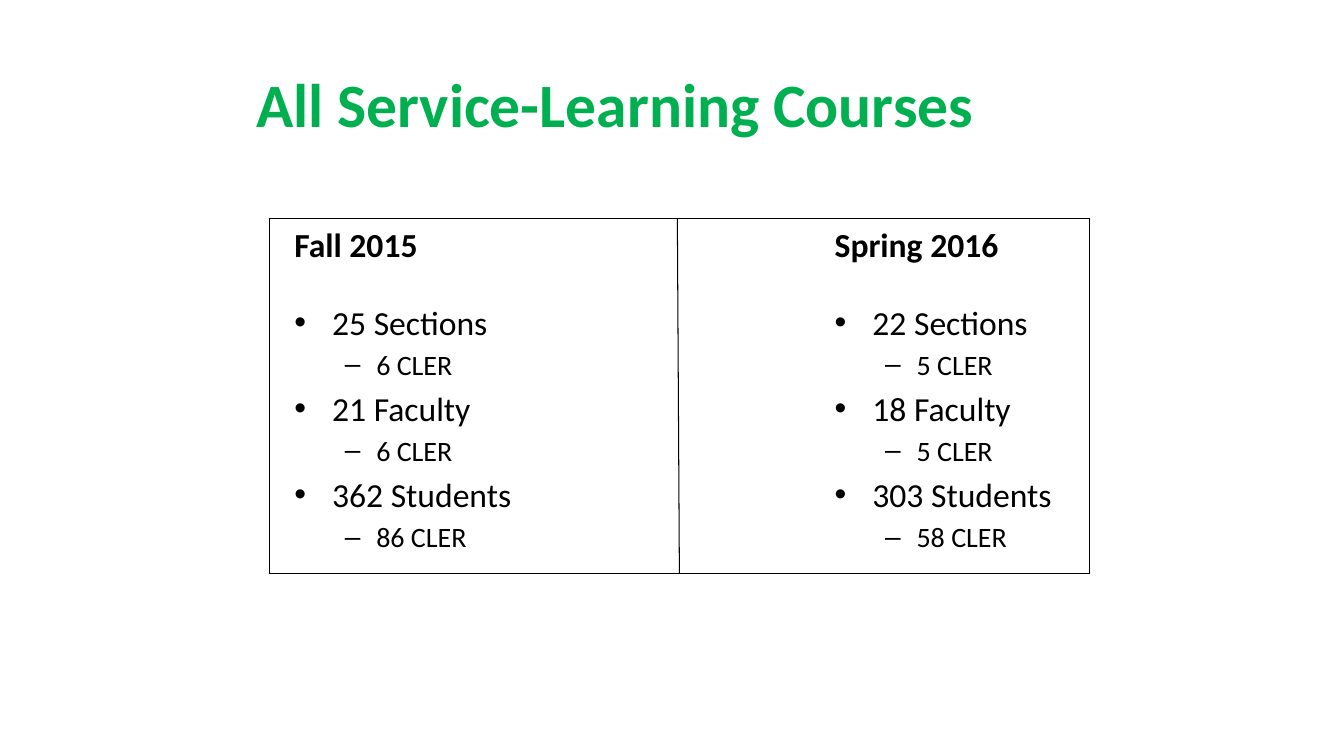
from dataclasses import dataclass

from lxml.etree import SubElement
from pptx import Presentation
from pptx.dml.color import RGBColor
from pptx.enum.shapes import MSO_CONNECTOR
from pptx.enum.text import MSO_ANCHOR, MSO_AUTO_SIZE, PP_ALIGN
from pptx.oxml.ns import qn
from pptx.shapes.placeholder import SlidePlaceholder
from pptx.slide import Slide
from pptx.table import _Cell
from pptx.text.text import TextFrame, _Paragraph
from pptx.util import Inches, Pt


@dataclass(frozen=True)
class Theme:
    font: str = "Calibri"
    accent: RGBColor = RGBColor(0x00, 0xB0, 0x50)
    ink: RGBColor = RGBColor(0x00, 0x00, 0x00)
    title_size: int = 44
    text_size: int = 24
    detail_size: int = 20
    border_width: float = 1
    divider_width: float = 0.75


@dataclass(frozen=True)
class Area:
    """A rectangle in percent of the slide's width and height."""
    left: float
    top: float
    width: float
    height: float


@dataclass(frozen=True)
class Term:
    name: str
    left: float
    heading_width: float
    counts: tuple[tuple[str, str], ...]  # total, and its CLER share


THEME = Theme()
SLIDE_WIDTH, SLIDE_HEIGHT = Inches(13.33), Inches(7.5)

TITLE_AREA = Area(18.3, 5.33, 78.3, 16.67)
FRAME_AREA = Area(20.03, 28.93, 61.05, 46.93)
DIVIDER_START, DIVIDER_END = 50.4, 50.55
HEADING_TOP, HEADING_HEIGHT = 26.27, 9.33
LIST_TOP, LIST_WIDTH, LIST_HEIGHT = 39.2, 44.2, 57.6

TERMS = (
    Term("Fall 2015", 21.15, 13.15, (
        ("25 Sections", "6 CLER"),
        ("21 Faculty", "6 CLER"),
        ("362 Students", "86 CLER"),
    )),
    Term("Spring 2016", 61.35, 15.6, (
        ("22 Sections", "5 CLER"),
        ("18 Faculty", "5 CLER"),
        ("303 Students", "58 CLER"),
    )),
)


def across(share: float) -> int:
    return round(SLIDE_WIDTH * share / 100)


def down(share: float) -> int:
    return round(SLIDE_HEIGHT * share / 100)


def place(placeholder: SlidePlaceholder, area: Area, anchor: MSO_ANCHOR) -> TextFrame:
    placeholder.left, placeholder.top = across(area.left), down(area.top)
    placeholder.width, placeholder.height = across(area.width), down(area.height)
    frame = placeholder.text_frame
    frame.word_wrap = True
    frame.auto_size = MSO_AUTO_SIZE.NONE
    frame.vertical_anchor = anchor
    frame.paragraphs[0].space_before = Pt(0)
    return frame


def write(paragraph: _Paragraph, text: str, size: int,
          color: RGBColor = THEME.ink, bold: bool = False) -> None:
    paragraph.text = text
    paragraph.alignment = PP_ALIGN.LEFT
    font = paragraph.font
    font.name, font.size, font.bold = THEME.font, Pt(size), bold
    font.color.rgb = color


def add_term(slide: Slide, term: Term, heading_index: int) -> None:
    heading_area = Area(term.left, HEADING_TOP, term.heading_width, HEADING_HEIGHT)
    heading = place(slide.placeholders[heading_index], heading_area, MSO_ANCHOR.BOTTOM)
    write(heading.paragraphs[0], term.name, THEME.text_size, bold=True)

    list_width = min(LIST_WIDTH, 100 - term.left)
    list_area = Area(term.left, LIST_TOP, list_width, LIST_HEIGHT)
    listing = place(slide.placeholders[heading_index + 1], list_area, MSO_ANCHOR.TOP)
    for row, (total, share) in enumerate(term.counts):
        paragraph = listing.add_paragraph() if row else listing.paragraphs[0]
        write(paragraph, total, THEME.text_size)
        detail = listing.add_paragraph()
        detail.level = 1
        write(detail, share, THEME.detail_size)


def add_borders(cell: _Cell) -> None:
    properties = cell._tc.get_or_add_tcPr()
    for side in ("a:lnL", "a:lnR", "a:lnT", "a:lnB"):
        line = SubElement(properties, qn(side), w=str(Pt(THEME.border_width)))
        fill = SubElement(line, qn("a:solidFill"))
        SubElement(fill, qn("a:srgbClr"), val=str(THEME.ink))


def add_frame(slide: Slide, area: Area) -> None:
    table = slide.shapes.add_table(1, 1, across(area.left), down(area.top),
                                   across(area.width), down(area.height)).table
    table.first_row = table.horz_banding = False
    cell = table.cell(0, 0)
    add_borders(cell)
    cell.fill.background()


def add_divider(slide: Slide) -> None:
    divider = slide.shapes.add_connector(
        MSO_CONNECTOR.STRAIGHT, across(DIVIDER_START), down(FRAME_AREA.top),
        across(DIVIDER_END), down(FRAME_AREA.top + FRAME_AREA.height))
    divider.line.color.rgb = THEME.ink
    divider.line.width = Pt(THEME.divider_width)
    SubElement(divider._element.spPr, qn("a:effectLst"))


def main() -> None:
    presentation = Presentation()
    presentation.slide_width, presentation.slide_height = SLIDE_WIDTH, SLIDE_HEIGHT
    comparison_layout = presentation.slide_layouts[4]
    slide = presentation.slides.add_slide(comparison_layout)

    # Title
    title = place(slide.shapes.title, TITLE_AREA, MSO_ANCHOR.MIDDLE)
    write(title.paragraphs[0], "All Service-Learning Courses",
          THEME.title_size, THEME.accent, bold=True)

    # One heading and list for each term
    for position, term in enumerate(TERMS):
        add_term(slide, term, heading_index=1 + 2 * position)

    # Frame around both terms, and the line between them
    add_frame(slide, FRAME_AREA)
    add_divider(slide)

    presentation.save("out.pptx")


if __name__ == "__main__":
    main()
